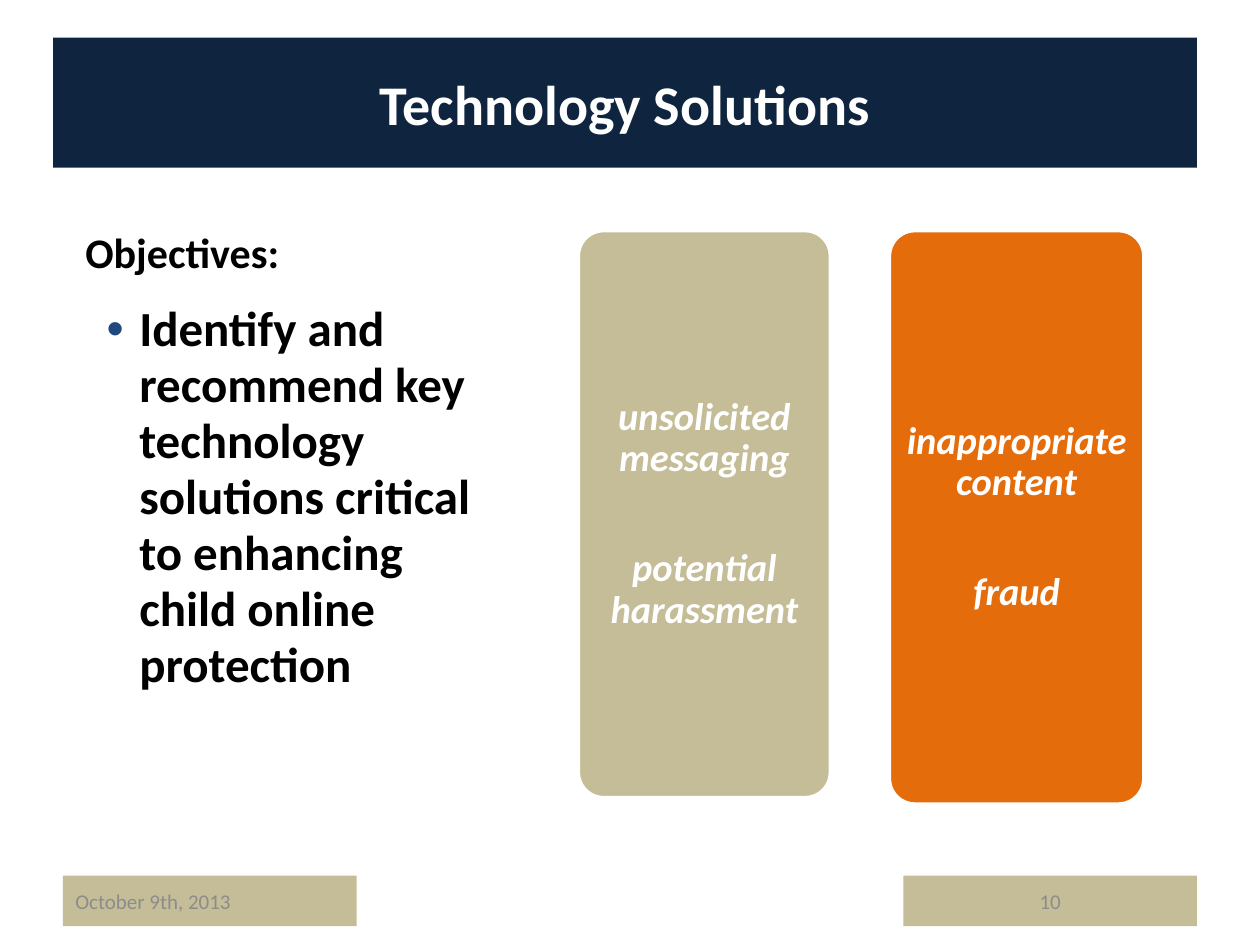
from lxml import etree
from pptx import Presentation
from pptx.dml.color import RGBColor
from pptx.enum.shapes import MSO_SHAPE
from pptx.enum.text import MSO_ANCHOR, PP_ALIGN
from pptx.oxml.ns import qn
from pptx.util import Cm, Pt

RECT, ROUND = MSO_SHAPE.RECTANGLE, MSO_SHAPE.ROUNDED_RECTANGLE
LEFT, MID = PP_ALIGN.LEFT, PP_ALIGN.CENTER
TOP, CENTER = MSO_ANCHOR.TOP, MSO_ANCHOR.MIDDLE
FONT = "Calibri"
HUES = {"navy": "0F243E", "tan": "C4BD97", "orange": "E46C0A", "white": "FFFFFF",
        "black": "000000", "gray": "8C8C8C", "blue": "1F497D"}


def tint(name):
    """Return the named colour."""
    return RGBColor.from_string(HUES[name])


def paint(shape, name):
    """Give a shape a solid fill."""
    shape.fill.solid()
    shape.fill.fore_color.rgb = tint(name)


def write(para, text, size, hue, align=LEFT, bold=True, slant=False):
    """Add one styled run to a paragraph."""
    para.alignment = align
    run = para.add_run()
    run.text = text
    font = run.font
    font.name, font.size, font.bold, font.italic = FONT, Pt(size), bold, slant
    font.color.rgb = tint(hue)


def add_title(slide, text):
    """Place and fill the title banner."""
    title = slide.shapes.title
    title.left, title.top, title.width, title.height = Cm(1.07), Cm(0.76), Cm(23.06), Cm(2.62)
    paint(title, "navy")
    title.text_frame.vertical_anchor = CENTER
    write(title.text_frame.paragraphs[0], text, 32, "white", MID)


def add_text(slide, box, text, size):
    """Add a wrapped text box and return its paragraph."""
    frame = slide.shapes.add_textbox(*map(Cm, box)).text_frame
    frame.word_wrap = True
    frame.vertical_anchor = TOP
    para = frame.paragraphs[0]
    write(para, text, size, "black")
    return para


def add_dot(para):
    """Give a paragraph a coloured bullet and a hanging indent."""
    props = para._p.get_or_add_pPr()
    props.set("marL", str(Cm(0.66)))
    props.set("indent", str(-Cm(0.66)))
    hue = etree.SubElement(props, qn("a:buClr"))
    etree.SubElement(hue, qn("a:srgbClr"), val=HUES["blue"])
    etree.SubElement(props, qn("a:buFont"), typeface="Arial")
    etree.SubElement(props, qn("a:buChar"), char="•")


def add_block(slide, kind, box, fill):
    """Add a filled shape without outline or shadow."""
    shape = slide.shapes.add_shape(kind, *map(Cm, box))
    shape.shadow.inherit = False
    paint(shape, fill)
    shape.line.fill.background()
    shape.text_frame.word_wrap = True
    shape.text_frame.vertical_anchor = CENTER
    return shape


def add_tag(slide, left, text, align):
    """Add a footer tag."""
    shape = add_block(slide, RECT, (left, 17.65, 5.92, 1.02), "tan")
    write(shape.text_frame.paragraphs[0], text, 12, "gray", align, bold=False)


def add_card(slide, box, fill, items):
    """Add a rounded card with spaced lines of text."""
    card = add_block(slide, ROUND, box, fill)
    card.adjustments[0] = 0.1
    card.line.color.rgb = tint("white")
    card.line.width = Pt(2)
    frame = card.text_frame
    frame.margin_left = frame.margin_right = Cm(0.13)
    frame.margin_top = frame.margin_bottom = Cm(0.08)
    for i, item in enumerate(items):
        para = frame.add_paragraph() if i else frame.paragraphs[0]
        para.line_spacing = 0.9
        para.space_before = Pt(39 if i else 0)
        write(para, item, 22, "white", MID, slant=True)


def main():
    """Build and save the slide."""
    deck = Presentation()
    deck.slide_width, deck.slide_height = Cm(25.4), Cm(19.05)
    slide = deck.slides.add_slide(deck.slide_layouts[5])
    add_title(slide, "Technology Solutions")
    goal = add_text(slide, (1.9, 5.97, 8.26, 9.04),
                    "Identify and recommend key technology solutions critical "
                    "to enhancing child online protection", 28)
    goal.line_spacing = 0.95
    add_dot(goal)
    add_tag(slide, 1.27, "October 9th, 2013", LEFT)
    add_tag(slide, 18.21, "10", MID)
    add_text(slide, (1.47, 4.44, 4.88, 1.27), "Objectives:", 24)
    add_card(slide, (17.93, 4.65, 5.13, 11.56), "orange", ["inappropriate content", "fraud"])
    add_card(slide, (11.66, 4.65, 5.08, 11.43), "tan",
             ["unsolicited messaging", "potential harassment"])
    deck.save("out.pptx")


if __name__ == "__main__":
    main()
